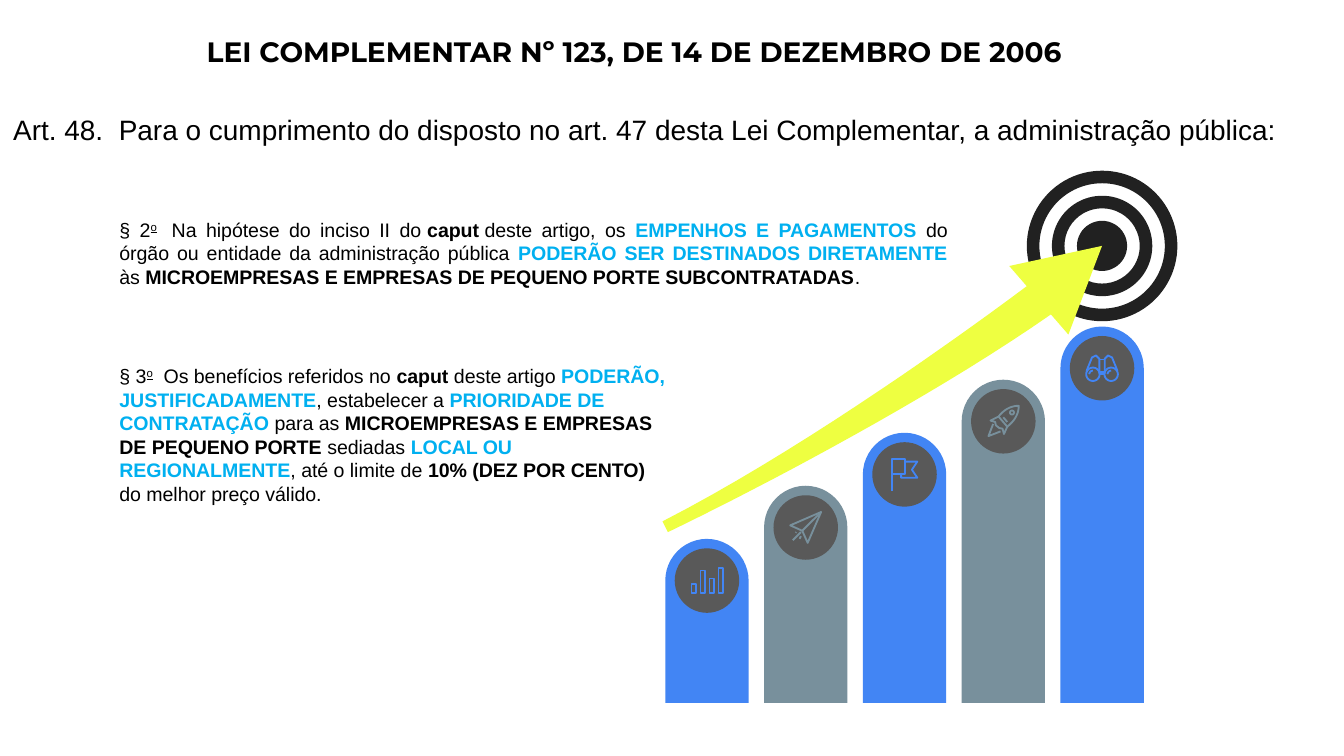
from dataclasses import dataclass
from math import cos, pi, sin

from pptx import Presentation
from pptx import util as u
from pptx.dml.color import RGBColor
from pptx.enum import shapes, text


@dataclass(frozen=True)
class Theme:
    black: str = "000000"
    dark: str = "212121"
    disk: str = "595959"
    blue: str = "4285F4"
    grey: str = "78909C"
    yellow: str = "EEFF41"
    accent: str = "00B0F0"
    heading_size: float = 15
    body_size: float = 10.5
    body_font: str = "Arial"
    title_font: str = "Montserrat"
    icon_line: float = 1


THEME = Theme()
PLAIN = {}
BOLD = {"bold": True}
ACCENT = {"bold": True, "color": THEME.accent}
ORDINAL = {"underline": True, "raised": True}

SLIDE_WIDTH = 10
SLIDE_HEIGHT = SLIDE_WIDTH * 9 / 16
HARD_SPACE_MARK = "~"
HARD_SPACE = chr(160)
BAR_COUNT = 5
BAR_WIDTH = 0.62
BAR_RISE = 0.395
DISK_SIZE = 0.48


def apply_format(target, values):
    for name, value in values.items():
        setattr(target, name, value)


def paint(shape, fill=None, line=None):
    shape.shadow.inherit = False
    if fill:
        shape.fill.solid()
        shape.fill.fore_color.rgb = RGBColor.from_string(fill)
    else:
        shape.fill.background()
    if line:
        shape.line.color.rgb = RGBColor.from_string(line)
        shape.line.width = u.Pt(THEME.icon_line)
    else:
        shape.line.fill.background()


def add_preset(slide, kind, box, fill, adjustments=()):
    shape = slide.shapes.add_shape(kind, *map(u.Inches, box))
    for index, value in enumerate(adjustments):
        shape.adjustments[index] = value
    paint(shape, fill)


def add_outline(slide, left, top, strokes, fill=None, line=None):
    placed = [[(u.Inches(left + x), u.Inches(top + y)) for x, y in stroke] for stroke in strokes]
    builder = slide.shapes.build_freeform(*placed[0][0])
    for index, stroke in enumerate(placed):
        if index:
            builder.move_to(*stroke[0])
        builder.add_line_segments(stroke[1:], close=stroke[0] == stroke[-1])
    paint(builder.convert_to_shape(), fill, line)


def arc(x, y, radius, start=0, end=2 * pi, steps=24):
    angles = [start + (end - start) * step / steps for step in range(steps + 1)]
    return [(x + radius * cos(angle), y + radius * sin(angle)) for angle in angles]


def curve(points, steps=20):
    result = []
    for step in range(steps + 1):
        t = step / steps
        weights = ((1 - t) ** 3, 3 * t * (1 - t) ** 2, 3 * t * t * (1 - t), t ** 3)
        result.append(tuple(sum(w * p[axis] for w, p in zip(weights, points)) for axis in (0, 1)))
    return result


def chart_icon():
    strokes = []
    for index, top in enumerate((2.5, -7.5, -1.5, -9.5)):
        left = -11.5 + 6.7 * index
        right = left + 3.5
        strokes.append([(left, top), (right, top), (right, 9.5), (left, 9.5), (left, top)])
    return strokes


def plane_icon():
    tip, fold = (11.5, -11.5), (-2.5, 2.5)
    return [
        [tip, (-11.5, -1.5), fold, (1.5, 11.5), tip],
        [tip, fold],
        [(-3.5, 6.5), (-4.5, 8.5)],
        [(-7, 3.5), (-7.5, 4)],
        [(-3.5, 3.5), (-9.5, 9.5)],
    ]


def flag_icon():
    return [
        [(-9.5, 12), (-9.5, -11.5), (0.5, -11.5), (0.5, -0.5), (-9.5, -0.5)],
        [(0.5, -9.5), (9.5, -9.5), (5.5, -3.5), (9.5, 2.5), (-2.5, 2.5), (-2.5, -0.5)],
    ]


def rocket_icon():
    nose, left, right = (11.5, -11.5), (-3.5, -3.5), (3, 4)
    return [
        curve([nose, (5, -11.5), (0, -8), left]) + curve([right, (8, 0), (11.5, -5), nose]),
        arc(6.5, -6.5, 1.5),
        [(0, -3), (3, 0.5)],
        [left, (-9.5, -0.5), (-6, 0.5), (-5.5, 3), (-3, 5), (-0.5, 5.5), (0.5, 9.5), right],
        [(-7.5, 2), (-11, 11), (-2, 7.5)],
    ]


def binoculars_icon():
    strokes = [[(-2, y), (2, y)] for y in (-6.5, 2.5, 4.5)]
    for side in (-1, 1):
        tube = [(11.5, 2), (7.5, -8), (4.5, -9.5), (2, -7), (2, 4)]
        strokes += [
            [(side * x, y) for x, y in tube],
            arc(side * 6.8, 4.5, 5),
            arc(side * 6.8, 4.5, 2.7, pi, 1.5 * pi, 6),
        ]
    return strokes


ICONS = (chart_icon, plane_icon, flag_icon, rocket_icon, binoculars_icon)


def bar_places(box):
    left, top, width, height = box
    step = (width - BAR_WIDTH) / (BAR_COUNT - 1)
    for index in range(BAR_COUNT):
        drop = BAR_RISE * (BAR_COUNT - 1 - index)
        color = (THEME.blue, THEME.grey)[index % 2]
        yield left + index * step, top + drop, height - drop, color


def draw_target(slide, box):
    left, top, size, _ = box
    ring = size / 12
    for inset in (0, 2 * ring):
        diameter = size - 2 * inset
        place = (left + inset, top + inset, diameter, diameter)
        add_preset(slide, shapes.MSO_SHAPE.DONUT, place, THEME.dark, [ring / diameter])
    inset = 4 * ring
    center = (left + inset, top + inset, size - 2 * inset, size - 2 * inset)
    add_preset(slide, shapes.MSO_SHAPE.OVAL, center, THEME.dark)


def draw_bars(slide, box):
    for left, top, height, color in bar_places(box):
        place = (left, top, BAR_WIDTH, height)
        add_preset(slide, shapes.MSO_SHAPE.ROUND_2_SAME_RECTANGLE, place, color, [0.5, 0])


def draw_arrow(slide, box):
    left, top, width, height = box
    tip = (width, 0)
    upper = curve([(2.71, 0.3), (2.63, 0.36), (1.21, 1.43), (0, height - 0.08)])
    lower = curve([(0.04, height), (0.52, 1.9), (1.9, 1.2), (2.89, 0.51)])
    add_outline(slide, left, top, [[tip, (2.58, 0.15), *upper, *lower, (3.02, 0.66), tip]], THEME.yellow)


def draw_badges(slide, box):
    inset = (BAR_WIDTH - DISK_SIZE) / 2
    places = list(bar_places(box))
    for left, top, _, _ in places:
        place = (left + inset, top + inset, DISK_SIZE, DISK_SIZE)
        add_preset(slide, shapes.MSO_SHAPE.OVAL, place, THEME.disk)
    for icon, (left, top, _, color) in zip(ICONS, places):
        strokes = [[(x / 100, y / 100) for x, y in stroke] for stroke in icon()]
        add_outline(slide, left + BAR_WIDTH / 2, top + BAR_WIDTH / 2, strokes, line=color)


def draw_text(slide, box, pieces, size, font=THEME.body_font, align=text.PP_ALIGN.LEFT):
    frame = slide.shapes.add_textbox(*map(u.Inches, box)).text_frame
    apply_format(frame, {"word_wrap": True, "auto_size": text.MSO_AUTO_SIZE.SHAPE_TO_FIT_TEXT})
    paragraph = frame.paragraphs[0]
    paragraph.alignment = align
    for words, style in pieces:
        run = paragraph.add_run()
        run.text = words.replace(HARD_SPACE_MARK, HARD_SPACE)
        apply_format(run.font, {
            "name": font,
            "size": u.Pt(size),
            "bold": style.get("bold", False),
            "underline": style.get("underline", False),
        })
        run.font.color.rgb = RGBColor.from_string(style.get("color", THEME.black))
        if style.get("raised"):
            run._r.get_or_add_rPr().set("baseline", "30000")


def main():
    presentation = Presentation()
    apply_format(presentation, {"slide_width": u.Inches(SLIDE_WIDTH), "slide_height": u.Inches(SLIDE_HEIGHT)})
    slide = presentation.slides.add_slide(presentation.slide_layouts[6])
    bars_box = (4.95, 2.43, 3.56, 2.8)
    draw_target(slide, (7.64, 1.27, 1.12, 1.12))
    draw_bars(slide, bars_box)
    draw_arrow(slide, (4.93, 1.83, 3.27, 2.13))
    draw_badges(slide, bars_box)
    draw_text(slide, (0, 0.79, 10, 0.35), [
        ("Art. 48. ~Para o cumprimento do disposto no art. 47 desta Lei Complementar, a administração pública:", PLAIN),
    ], THEME.heading_size)
    draw_text(slide, (1.44, 0.21, 7.4, 0.35), [
        ("LEI COMPLEMENTAR Nº 123, DE 14 DE DEZEMBRO DE 2006", BOLD),
    ], THEME.heading_size, THEME.title_font)
    draw_text(slide, (0.79, 1.57, 6.36, 0.63), [
        ("§ 2", PLAIN), ("o", ORDINAL), ("~ Na hipótese do inciso II do~", PLAIN), ("caput", BOLD),
        ("~deste artigo, os ", PLAIN), ("EMPENHOS E PAGAMENTOS", ACCENT),
        (" do órgão ou entidade da administração pública ", PLAIN),
        ("PODERÃO SER DESTINADOS DIRETAMENTE ", ACCENT), ("às ", PLAIN),
        ("MICROEMPRESAS E EMPRESAS DE PEQUENO PORTE SUBCONTRATADAS", BOLD), (".", PLAIN),
    ], THEME.body_size, align=text.PP_ALIGN.JUSTIFY)
    draw_text(slide, (0.79, 2.66, 4.28, 1.16), [
        ("§ 3", PLAIN), ("o", ORDINAL), ("~~Os benefícios referidos no~", PLAIN), ("caput", BOLD),
        ("~deste artigo ", PLAIN), ("PODERÃO, JUSTIFICADAMENTE", ACCENT), (", estabelecer a ", PLAIN),
        ("PRIORIDADE DE CONTRATAÇÃO", ACCENT), (" para as ", PLAIN),
        ("MICROEMPRESAS E EMPRESAS DE PEQUENO PORTE", BOLD), (" sediadas ", PLAIN),
        ("LOCAL OU REGIONALMENTE", ACCENT), (", até o limite de ", PLAIN),
        ("10% (DEZ POR CENTO)", BOLD), (" do melhor preço válido.", PLAIN),
    ], THEME.body_size)
    presentation.save("out.pptx")


if __name__ == "__main__":
    main()
